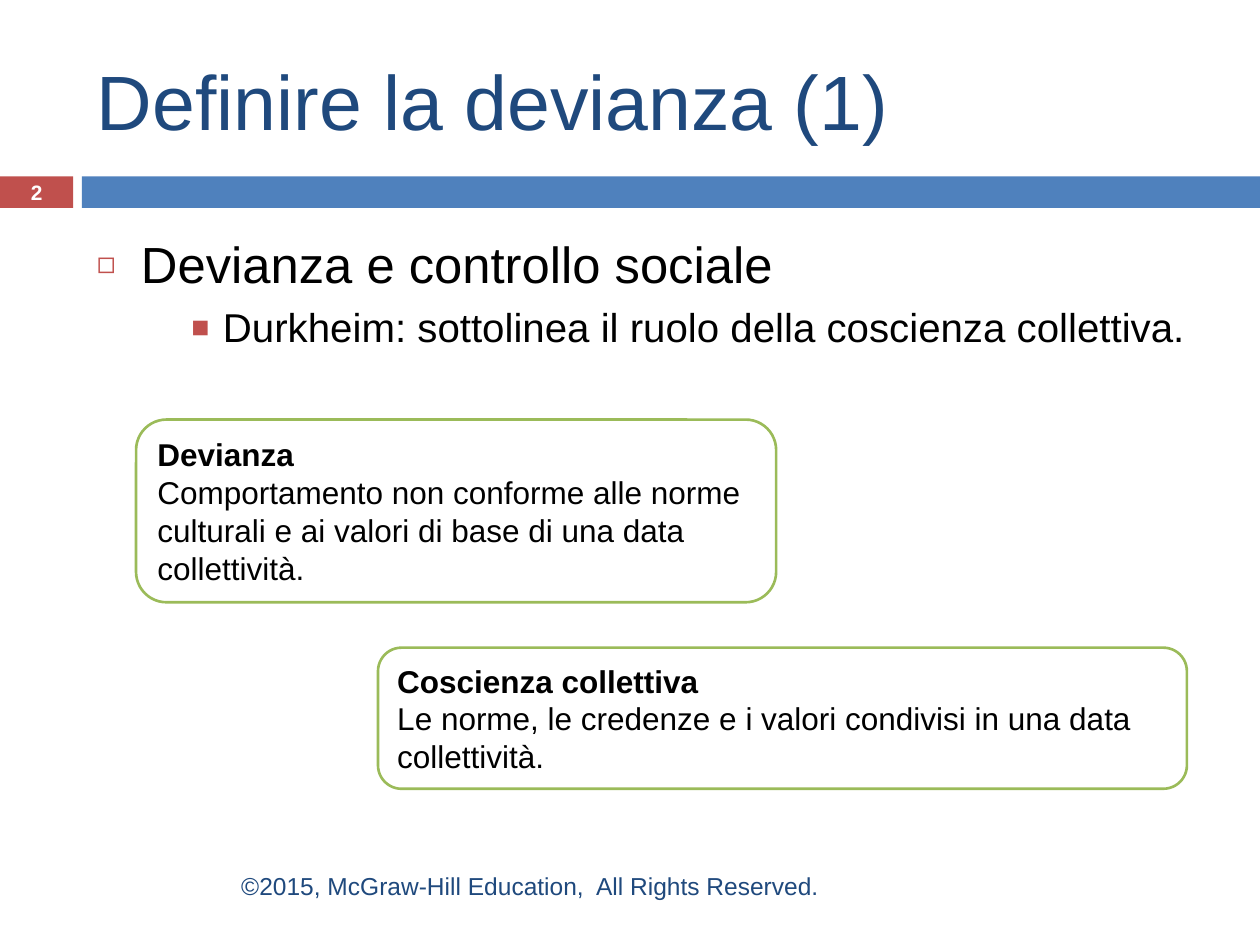
from lxml import etree
from pptx import Presentation
from pptx.dml.color import RGBColor
from pptx.enum.shapes import MSO_SHAPE
from pptx.enum.text import MSO_ANCHOR, PP_ALIGN
from pptx.oxml.ns import qn
from pptx.util import Inches, Pt

RECT, ROUND = MSO_SHAPE.RECTANGLE, MSO_SHAPE.ROUNDED_RECTANGLE
TOP, MIDDLE = MSO_ANCHOR.TOP, MSO_ANCHOR.MIDDLE
LEFT, CENTER, RIGHT = PP_ALIGN.LEFT, PP_ALIGN.CENTER, PP_ALIGN.RIGHT

WIDTH, HEIGHT = 10, 7.5
MARGIN, SPAN = 0.67, 8.92
NAVY, BLUE, RED, GREEN = "1F497D", "4F81BD", "C0504D", "9BBB59"
WHITE, BLACK = "FFFFFF", "000000"

TITLE = "Definire la devianza (1)"
NUMBER = "2"
FOOTER = "©2015, McGraw-Hill Education,  All Rights Reserved."
BARS = [((0, 1.4, 0.58, 0.25), RED), ((0.65, 1.4, 9.35, 0.25), BLUE)]
POINTS = [
    ("Devianza e controllo sociale",
     dict(size=29, bullet=("◻", 60, 0.35, 0.35))),
    ("Durkheim: sottolinea il ruolo della coscienza collettiva.",
     dict(size=23, before=5, level=2, bullet=("■", 75, 1, 0.25))),
]
CARDS = [
    ((1.08, 3.33, 5.08, 1.45), "Devianza",
     "Comportamento non conforme alle norme culturali e ai valori di base "
     "di una data collettività."),
    ((3, 5.14, 6.42, 1.12), "Coscienza collettiva",
     "Le norme, le credenze e i valori condivisi in una data collettività."),
]


def color(code):
    """Turn a hex string into a colour."""
    return RGBColor.from_string(code)


def mark(para, char, scale, indent, hang):
    """Give a paragraph a hanging red bullet."""
    props = para._p.get_or_add_pPr()
    props.set("marL", str(Inches(indent)))
    props.set("indent", str(-Inches(hang)))
    tint = etree.SubElement(props, qn("a:buClr"))
    etree.SubElement(tint, qn("a:srgbClr"), val=RED)
    etree.SubElement(props, qn("a:buSzPct"), val=str(scale * 1000))
    etree.SubElement(props, qn("a:buFont"), typeface="Arial")
    etree.SubElement(props, qn("a:buChar"), char=char)


def write(frame, text, size=18, ink=BLACK, bold=False, align=LEFT,
          before=0, level=0, bullet=None):
    """Add one formatted paragraph to a text frame."""
    para = frame.paragraphs[0] if not frame.text else frame.add_paragraph()
    para.alignment, para.level = align, level
    para.space_before = Pt(before)
    if bullet:
        mark(para, *bullet)
    run = para.add_run()
    run.text = text
    font = run.font
    font.name, font.size, font.bold = "Arial", Pt(size), bold
    font.color.rgb = color(ink)


def label(slide, area, anchor=MIDDLE):
    """Add a wrapping text box and return its frame."""
    frame = slide.shapes.add_textbox(*map(Inches, area)).text_frame
    frame.word_wrap = True
    frame.vertical_anchor = anchor
    return frame


def block(slide, kind, area, fill, line=None):
    """Add a flat filled shape."""
    shape = slide.shapes.add_shape(kind, *map(Inches, area))
    shape.shadow.inherit = False
    shape.fill.solid()
    shape.fill.fore_color.rgb = color(fill)
    if line:
        shape.line.color.rgb = color(line)
        shape.line.width = Pt(1.5)
    else:
        shape.line.fill.background()
    return shape


def main():
    """Build and save the slide."""
    deck = Presentation()
    deck.slide_width, deck.slide_height = Inches(WIDTH), Inches(HEIGHT)
    slide = deck.slides.add_slide(deck.slide_layouts[6])

    for area, fill in BARS:
        block(slide, RECT, area, fill)
    write(label(slide, (MARGIN, 0.25, SPAN, 1.08)), TITLE, size=44, ink=NAVY)

    body = label(slide, (MARGIN, 1.75, SPAN, 4.92), TOP)
    body.margin_top = Inches(0.1)
    for text, style in POINTS:
        write(body, text, **style)

    page = label(slide, (0, 1.39, 0.58, 0.27))
    write(page, NUMBER, size=11.9, ink=WHITE, bold=True, align=CENTER)

    for area, term, sense in CARDS:
        frame = block(slide, ROUND, area, WHITE, GREEN).text_frame
        frame.word_wrap = True
        frame.vertical_anchor = MIDDLE
        write(frame, term, bold=True)
        write(frame, sense)

    foot = label(slide, (MARGIN, 6.83, 5.93, 0.4))
    write(foot, FOOTER, size=14, ink=NAVY, align=RIGHT)
    deck.save("out.pptx")


if __name__ == "__main__":
    main()
